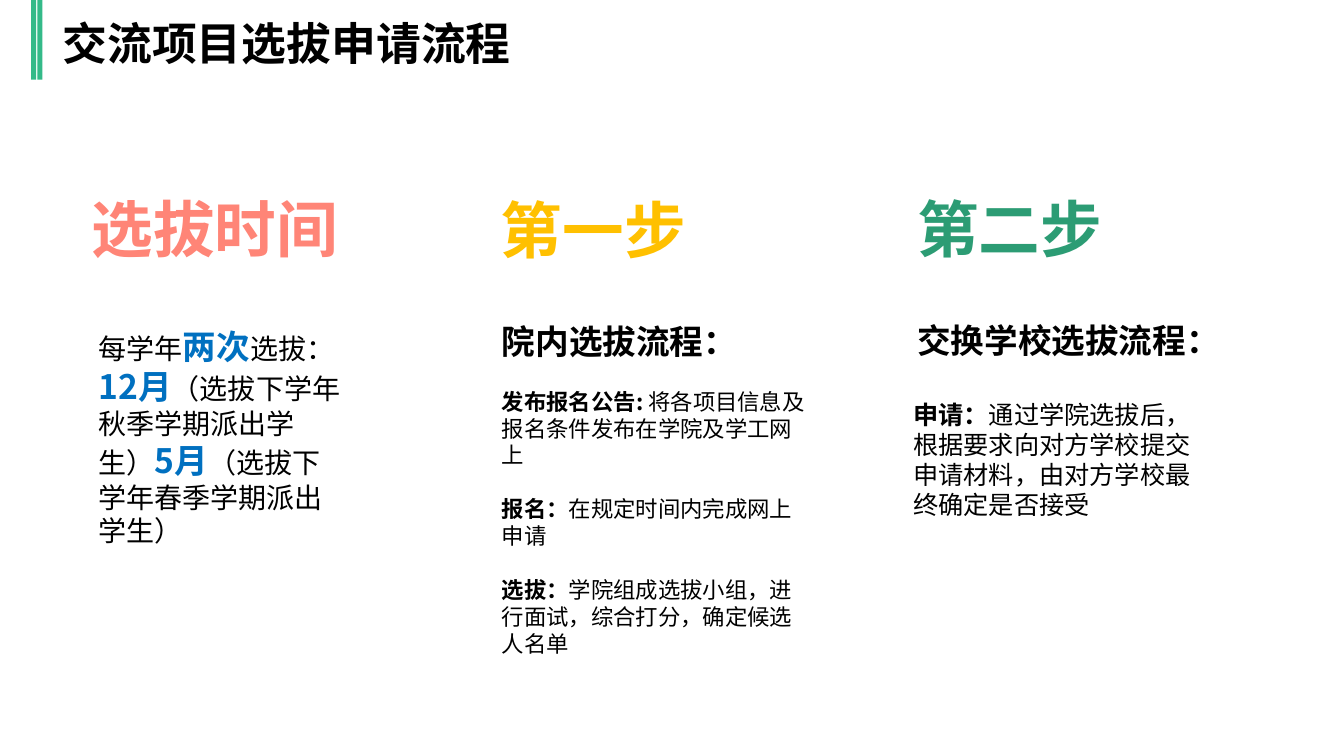
from pptx import Presentation
from pptx import util as u
from pptx.dml.color import RGBColor
from pptx.enum import shapes, text
from pptx.oxml.ns import qn
from lxml import etree

FONT = "Noto Sans CJK SC"
COLORS = {
    "black": "000000",
    "bar": "34BA89",
    "blue": "0070C0",
    "coral": "FF8577",
    "amber": "FFC000",
    "green": "2C9C74",
}


def add_run(paragraph, words, size=16, color="black", bold=False):
    run = paragraph.add_run()
    run.text = words
    run.font.size = u.Pt(size)
    run.font.bold = bold
    run.font.name = FONT
    run.font.color.rgb = RGBColor.from_string(COLORS[color])
    # East Asian text needs its own typeface entry
    latin = run.font._element.find(qn("a:latin"))
    east_asian = etree.Element(qn("a:ea"), typeface=FONT)
    latin.addnext(east_asian)


class SlideBuilder:
    line_spacing = 1.0

    def __init__(self, slide):
        self.slide = slide

    def fill_frame(self, holder, paragraphs, gap=0):
        """Each paragraph is a list of (words, format) pairs."""
        frame = holder.text_frame
        frame.word_wrap = True
        frame.auto_size = text.MSO_AUTO_SIZE.SHAPE_TO_FIT_TEXT
        frame.vertical_anchor = text.MSO_ANCHOR.TOP
        frame.margin_left = frame.margin_right = u.Inches(0.1)
        frame.margin_top = frame.margin_bottom = u.Inches(0.05)
        for index, runs in enumerate(paragraphs):
            paragraph = frame.add_paragraph() if index else frame.paragraphs[0]
            paragraph.alignment = text.PP_ALIGN.LEFT
            paragraph.line_spacing = self.line_spacing
            paragraph.space_before = u.Pt(gap if index else 0)
            paragraph.space_after = u.Pt(0)
            for words, style in runs:
                add_run(paragraph, words, **style)

    def title(self, words, left, top, width, height, **style):
        heading = self.slide.shapes.title
        heading.left, heading.top = u.Inches(left), u.Inches(top)
        heading.width, heading.height = u.Inches(width), u.Inches(height)
        self.fill_frame(heading, [[(words, style)]])

    def text_box(self, paragraphs, left, top, width, height, gap=0):
        box = self.slide.shapes.add_textbox(
            u.Inches(left), u.Inches(top), u.Inches(width), u.Inches(height))
        self.fill_frame(box, paragraphs, gap)

    def bar(self, left, top, width, height, color):
        bar = self.slide.shapes.add_shape(
            shapes.MSO_SHAPE.RECTANGLE,
            u.Inches(left), u.Inches(top), u.Inches(width), u.Inches(height))
        bar.shadow.inherit = False
        bar.fill.solid()
        bar.fill.fore_color.rgb = RGBColor.from_string(COLORS[color])
        bar.line.fill.background()


def main():
    deck = Presentation()
    deck.slide_width, deck.slide_height = u.Inches(13.33), u.Inches(7.5)
    builder = SlideBuilder(deck.slides.add_slide(deck.slide_layouts[5]))

    # Title with its double bar
    for bar_left in (0.31, 0.37):
        builder.bar(bar_left, 0, 0.05, 0.79, "bar")
    builder.title("交流项目选拔申请流程", 0.52, 0.11, 5.36, 0.64, size=32, bold=True)

    # Column headings
    for heading, color, left, top, width in (
        ("选拔时间", "coral", 0.81, 1.85, 3.16),
        ("第一步", "amber", 4.87, 1.86, 2.79),
        ("第二步", "green", 9, 1.84, 3.67),
    ):
        style = dict(size=44, color=color, bold=True)
        builder.text_box([[(heading, style)]], left, top, width, 0.84)

    # Selection times
    plain = dict(size=20)
    accent = dict(size=24, color="blue", bold=True)
    builder.text_box([
        [("每学年", plain), ("两次", accent), ("选拔：", plain)],
        [("12月", accent), ("（选拔下学年秋季学期派出学生）", plain),
         ("5月", accent), ("（选拔下学年春季学期派出学生）", plain)],
    ], 0.88, 3.18, 2.65, 1.27)

    # Step one: selection within the school
    subheading = dict(size=24, bold=True)
    stages = (
        ("发布报名公告: ", "将各项目信息及报名条件发布在学院及学工网上"),
        ("报名：", "在规定时间内完成网上申请"),
        ("选拔：", "学院组成选拔小组，进行面试，综合打分，确定候选人名单"),
    )
    stage_lines = [[(label, dict(size=16, bold=True)), (detail, dict(size=16))]
                   for label, detail in stages]
    builder.text_box([[("院内选拔流程：", subheading)]] + stage_lines,
                     4.88, 3.13, 3.21, 3.67, gap=19.3)

    # Step two: selection by the partner school
    builder.text_box([[("交换学校选拔流程：", subheading)]], 9, 3.12, 3.1, 0.5)
    builder.text_box([[
        ("申请：", dict(size=18, bold=True)),
        ("通过学院选拔后，根据要求向对方学校提交申请材料，由对方学校最终确定是否接受",
         dict(size=18)),
    ]], 8.96, 3.91, 3.05, 1.31)

    deck.save("out.pptx")


if __name__ == "__main__":
    main()
